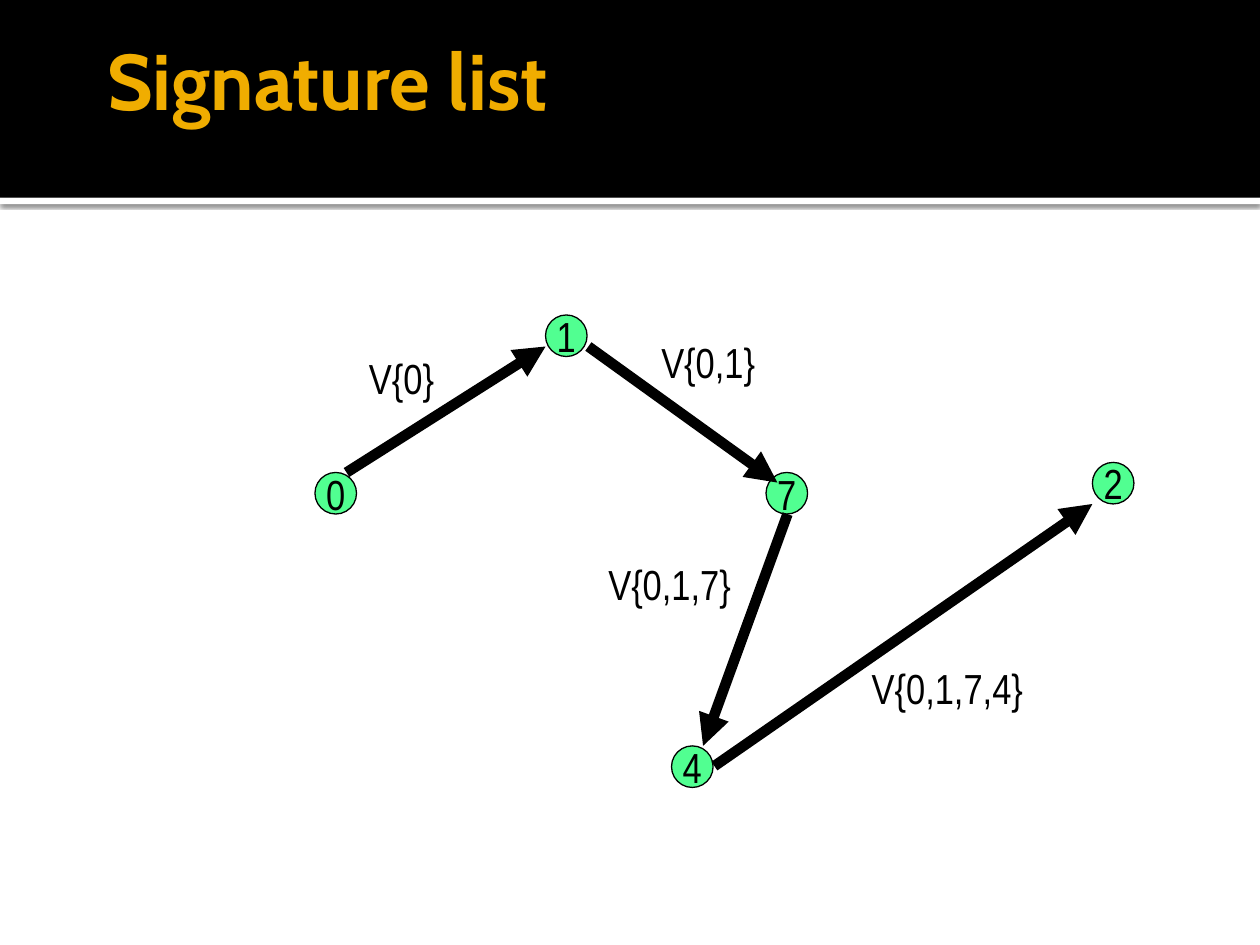
from lxml.etree import SubElement
from pptx import Presentation
from pptx.dml.color import RGBColor
from pptx.enum.shapes import MSO_CONNECTOR, MSO_SHAPE
from pptx.enum.text import MSO_ANCHOR as Anchor, MSO_AUTO_SIZE as AutoSize, PP_ALIGN as Align
from pptx.oxml.ns import qn
from pptx.util import Inches, Pt

BLACK = RGBColor(0x00, 0x00, 0x00)
WHITE = RGBColor(0xFF, 0xFF, 0xFF)
AMBER = RGBColor(0xF0, 0xAD, 0x00)
GREEN = RGBColor(0x51, 0xFF, 0x91)

NODE_SIZE = 0.33
NODES = [("0", 2.5, 3.75), ("1", 4.33, 2.5), ("7", 6.08, 3.75), ("2", 8.67, 3.67), ("4", 5.33, 5.92)]
ARROWS = [
    ((2.75, 3.75), (4.33, 2.75)),
    ((4.67, 2.75), (6.17, 3.83)),
    ((6.25, 4.08), (5.58, 5.92)),
    ((5.67, 6.08), (8.67, 4)),
]
LABELS = [
    ("V{0}", (2.83, 2.75, 0.72, 0.5)),
    ("V{0,1}", (5.15, 2.62, 0.95, 0.5)),
    ("V{0,1,7}", (4.73, 4.38, 1.17, 0.5)),
    ("V{0,1,7,4}", (6.82, 5.21, 1.4, 0.5)),
]


def inches(*lengths):
    """Convert several lengths to Inches."""
    return [Inches(length) for length in lengths]


def write_text(frame, text, size, font, color, align, bold=False):
    """Set one formatted paragraph in a text frame."""
    frame.text = text
    para = frame.paragraphs[0]
    para.alignment = align
    span = para.runs[0]
    span.font.size = Pt(size)
    span.font.name = font
    span.font.color.rgb = color
    span.font.bold = bold


def add_filled(page, kind, box, fill):
    """Add a flat shape without an outline."""
    shape = page.shapes.add_shape(kind, *inches(*box))
    shape.shadow.inherit = False
    shape.fill.solid()
    shape.fill.fore_color.rgb = fill
    shape.line.fill.background()
    return shape


def add_soft_shadow(shape):
    """Cast a short, soft shadow below a shape."""
    effects = shape.element.spPr.find(qn("a:effectLst"))
    shadow = SubElement(effects, qn("a:outerShdw"), blurRad=str(Pt(2.5)), dist=str(Pt(0.8)),
                        dir="5400000", algn="t", rotWithShape="0")
    color = SubElement(shadow, qn("a:srgbClr"), val=str(BLACK))
    SubElement(color, qn("a:alpha"), val="60000")


def add_header(page, box, text):
    """Place the black band, its shadowed strip and the title."""
    left, top, width, height = box
    strip = add_filled(page, MSO_SHAPE.RECTANGLE, (left, top + height, width, 0.05), WHITE)
    add_soft_shadow(strip)
    band = add_filled(page, MSO_SHAPE.RECTANGLE, box, BLACK)
    title = page.shapes.title
    for backdrop in (strip, band):
        title.element.addprevious(backdrop.element)
    title.left, title.top, title.width, title.height = inches(left + 0.75, top, width - 1.5, 1.25)
    frame = title.text_frame
    frame.word_wrap = True
    frame.auto_size = AutoSize.NONE
    frame.vertical_anchor = Anchor.MIDDLE
    frame.margin_left = Inches(0.1)
    frame.margin_top = frame.margin_right = frame.margin_bottom = Inches(0.05)
    write_text(frame, text, 45, "Cabin", AMBER, Align.LEFT, bold=True)


def add_node(page, box, text):
    """Place one numbered circle."""
    node = add_filled(page, MSO_SHAPE.OVAL, box, GREEN)
    node.line.color.rgb = BLACK
    node.line.width = Pt(0.75)
    frame = node.text_frame
    frame.word_wrap = False
    frame.vertical_anchor = Anchor.MIDDLE
    write_text(frame, text, 24, "Arial Narrow", BLACK, Align.CENTER)


def add_arrow(page, start, end):
    """Draw a thick arrow between two points."""
    arrow = page.shapes.add_connector(MSO_CONNECTOR.STRAIGHT, *inches(*start, *end))
    arrow.line.color.rgb = BLACK
    arrow.line.width = Pt(6)
    SubElement(arrow.line._get_or_add_ln(), qn("a:tailEnd"), type="triangle")
    SubElement(arrow.element.spPr, qn("a:effectLst"))


def add_label(page, box, text):
    """Place the signature text beside an arrow."""
    frame = page.shapes.add_textbox(*inches(*box)).text_frame
    frame.word_wrap = False
    frame.auto_size = AutoSize.SHAPE_TO_FIT_TEXT
    write_text(frame, text, 24, "Arial Narrow", BLACK, Align.LEFT)


def add_graph(page):
    """Place the nodes, arrows and signatures of the route."""
    for text, left, top in NODES:
        add_node(page, (left, top, NODE_SIZE, NODE_SIZE), text)
    for start, end in ARROWS:
        add_arrow(page, start, end)
    for text, box in LABELS:
        add_label(page, box, text)


def main():
    """Build and save the deck."""
    deck = Presentation()
    deck.slide_width, deck.slide_height = inches(10, 7.5)
    page = deck.slides.add_slide(deck.slide_layouts[5])
    add_header(page, (0, 0, 10, 1.57), "Signature list")
    add_graph(page)
    deck.save("out.pptx")


if __name__ == "__main__":
    main()
